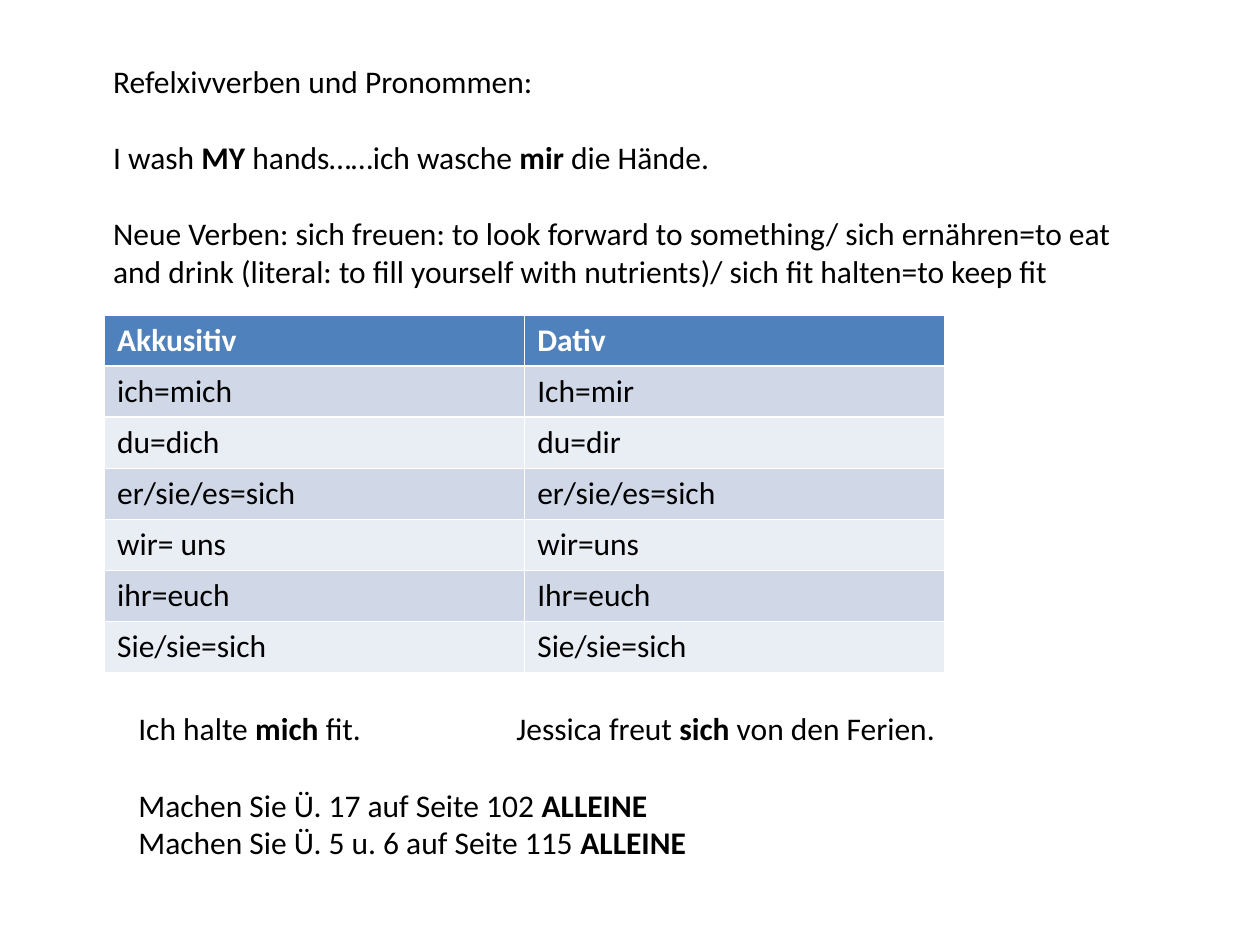
from lxml import etree
from pptx import Presentation
from pptx.dml.color import RGBColor
from pptx.enum.text import MSO_AUTO_SIZE
from pptx.oxml.ns import qn
from pptx.util import Inches, Pt

FIT_SHAPE = MSO_AUTO_SIZE.SHAPE_TO_FIT_TEXT
FONT = "Calibri"
TEXT_SIZE = Pt(18)
LINE_GAP = Pt(22)
BLANK_LAYOUT = 6
COLORS = {
    "text": "000000",
    "header_text": "FFFFFF",
    "header": "4F81BD",
    "odd_row": "D0D8E8",
    "even_row": "E9EDF4",
}

INTRO = [
    (["Refelxivverben und Pronommen:"], False),
    (["I wash ", "MY", " hands……ich wasche ", "mir ", "die Hände."], True),
    (["Neue Verben: sich freuen: to look forward to something/ sich ernähren=to eat "
      "and drink (literal: to fill yourself with nutrients)/ sich fit halten=to keep fit"], True),
]
PRONOUNS = [
    ("Akkusitiv", "Dativ"),
    ("ich=mich", "Ich=mir"),
    ("du=dich", "du=dir"),
    ("er/sie/es=sich", "er/sie/es=sich"),
    ("wir= uns", "wir=uns"),
    ("ihr=euch", "Ihr=euch"),
    ("Sie/sie=sich", "Sie/sie=sich"),
]
EXERCISES = [
    (["Ich halte ", "mich ", "fit. \t\tJessica freut ", "sich", " von den Ferien."], False),
    (["Machen Sie Ü. 17 auf Seite 102 ", "ALLEINE"], True),
    (["Machen Sie Ü. 5 u. 6 auf Seite 115 ", "ALLEINE"], False),
]


def format_span(span, color, bold):
    span.font.name = FONT
    span.font.size = TEXT_SIZE
    span.font.bold = bold
    span.font.color.rgb = RGBColor.from_string(COLORS[color])


def add_tab_stops(para, stops):
    tab_list = etree.SubElement(para._p.get_or_add_pPr(), qn("a:tabLst"))
    for stop in stops:
        etree.SubElement(tab_list, qn("a:tab"), pos=str(Inches(stop)), algn="l")


def add_text(page, area, lines, tab_stops=()):
    box = page.shapes.add_textbox(*map(Inches, area))
    frame = box.text_frame
    frame.word_wrap = True
    frame.auto_size = FIT_SHAPE
    for index, (pieces, spaced) in enumerate(lines):
        para = frame.paragraphs[0] if index == 0 else frame.add_paragraph()
        if spaced:
            para.space_before = LINE_GAP
        for position, piece in enumerate(pieces):
            span = para.add_run()
            span.text = piece
            format_span(span, "text", position % 2 == 1)
    if tab_stops:
        add_tab_stops(frame.paragraphs[0], tab_stops)


def add_pronoun_table(page, area, rows):
    table = page.shapes.add_table(len(rows), len(rows[0]), *map(Inches, area)).table
    for row_index, row in enumerate(rows):
        is_header = row_index == 0
        fill = "header" if is_header else "odd_row" if row_index % 2 else "even_row"
        for column_index, text in enumerate(row):
            cell = table.cell(row_index, column_index)
            cell.fill.solid()
            cell.fill.fore_color.rgb = RGBColor.from_string(COLORS[fill])
            cell.text_frame.text = text
            span = cell.text_frame.paragraphs[0].runs[0]
            format_span(span, "header_text" if is_header else "text", is_header)


def main():
    deck = Presentation()
    deck.slide_width = Inches(10)
    deck.slide_height = Inches(7.5)
    page = deck.slides.add_slide(deck.slide_layouts[BLANK_LAYOUT])
    add_text(page, (0.8, 0.44, 8.33, 2.22), INTRO)
    add_pronoun_table(page, (0.83, 2.5, 6.67, 2.84), PRONOUNS)
    add_text(page, (1, 5.58, 8.14, 1.31), EXERCISES, tab_stops=(2, 3))
    deck.save("out.pptx")


if __name__ == "__main__":
    main()
